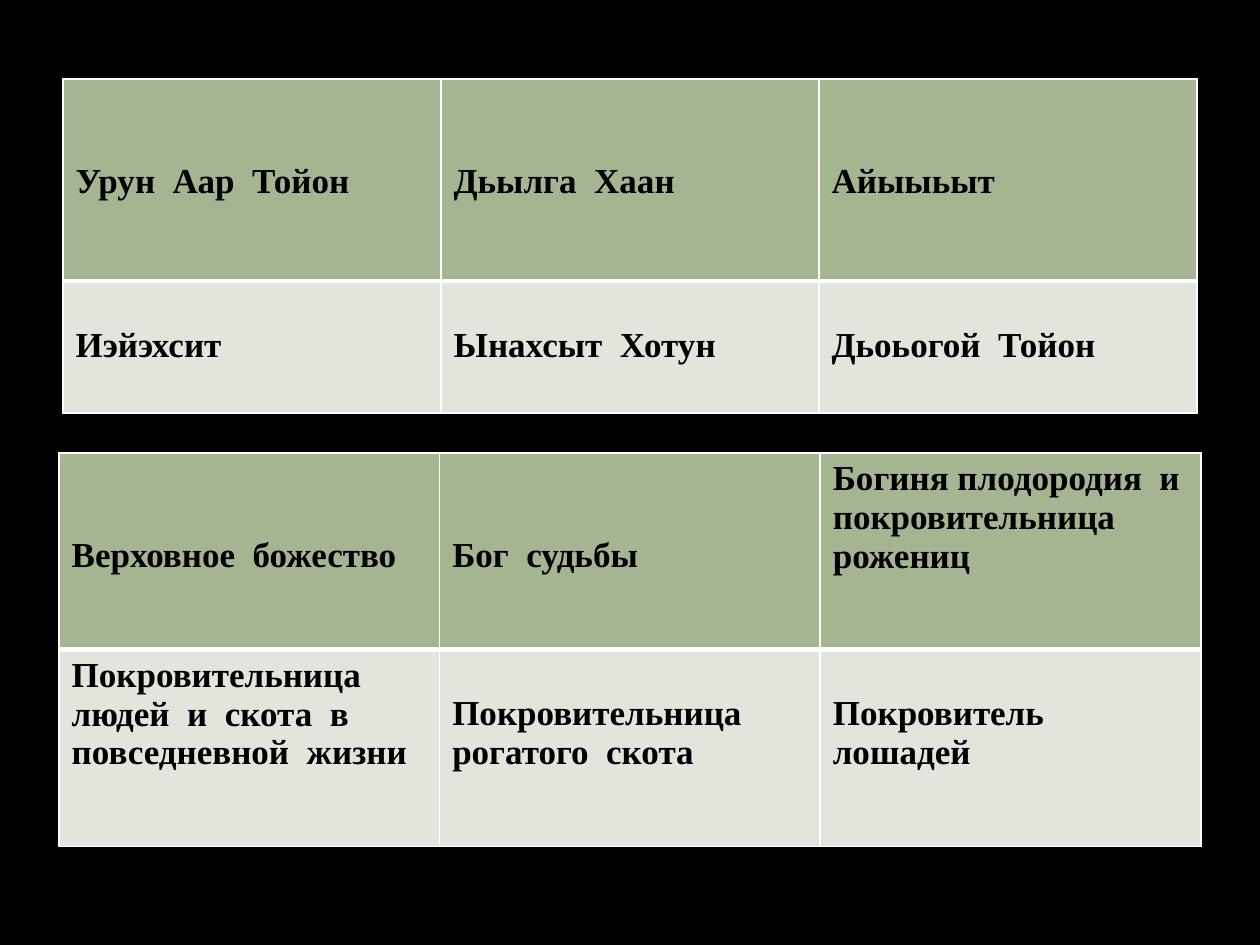
"""Build a slide with two tables: Yakut deities and the roles they play."""
from lxml.etree import SubElement
from pptx import Presentation
from pptx.dml.color import RGBColor as Color
from pptx.oxml.ns import qn
from pptx.util import Pt

BLACK = RGB_TEXT = Color(0x00, 0x00, 0x00)
WHITE = Color(0xFF, 0xFF, 0xFF)
SAGE = Color(0xA5, 0xB5, 0x92)
PALE_SAGE = Color(0xE1, 0xE5, 0xDC)

LINE_HEIGHT = 22.15
CELL_MARGIN = 3.6

DEITIES = [
    [("Урун  Аар  Тойон", 2), ("Дьылга  Хаан", 2), ("Айыыьыт", 2)],
    [("Иэйэхсит", 1), ("Ынахсыт  Хотун", 1), ("Дьоьогой  Тойон", 1)],
]
ROLES = [
    [("Верховное  божество", 2), ("Бог  судьбы", 2),
     ("Богиня плодородия  и покровительница\nрожениц", 0)],
    [("Покровительница  людей  и  скота  в повседневной  жизни", 0),
     ("Покровительница  рогатого  скота", 1),
     ("Покровитель  лошадей", 1)],
]


def write_text(frame, text, size=20, color=BLACK, bold=True, font="Times New Roman"):
    """Fill a text frame, one paragraph per line of text."""
    frame.text = text
    for paragraph in frame.paragraphs:
        for run in paragraph.runs:
            run.font.size = Pt(size)
            run.font.bold = bold
            run.font.name = font
            run.font.color.rgb = color


def draw_border(cell, side, width):
    """Give one side (L, R, T or B) of a cell a solid white line."""
    line = SubElement(cell._tc.get_or_add_tcPr(), qn(f"a:ln{side}"), w=str(Pt(width)))
    fill = SubElement(line, qn("a:solidFill"))
    SubElement(fill, qn("a:srgbClr"), val=str(WHITE))


def style_cell(cell, is_header, lines_above):
    """Set borders, fill and the drop of the text below the cell top."""
    top, bottom = (1, 3) if is_header else (3, 1)
    for side, width in zip("LRTB", (1, 1, top, bottom)):
        draw_border(cell, side, width)
    cell.fill.solid()
    cell.fill.fore_color.rgb = SAGE if is_header else PALE_SAGE
    cell.margin_top = Pt(CELL_MARGIN + lines_above * LINE_HEIGHT)


def add_grid(slide, entries, left, top, column_width, row_heights):
    """Add a table of (text, lines above) entries with equal columns."""
    columns = len(entries[0])
    table = slide.shapes.add_table(
        len(entries), columns, Pt(left), Pt(top),
        Pt(column_width * columns), Pt(sum(row_heights))).table
    for column in table.columns:
        column.width = Pt(column_width)
    for row_index, (row, height) in enumerate(zip(entries, row_heights)):
        table.rows[row_index].height = Pt(height)
        for column_index, (text, lines_above) in enumerate(row):
            cell = table.cell(row_index, column_index)
            style_cell(cell, row_index == 0, lines_above)
            write_text(cell.text_frame, text)


def main():
    """Build the slide and save it."""
    deck = Presentation()
    deck.slide_width, deck.slide_height = Pt(720), Pt(540)
    slide = deck.slides.add_slide(deck.slide_layouts[6])
    slide.background.fill.solid()
    slide.background.fill.fore_color.rgb = BLACK
    add_grid(slide, DEITIES, 36, 45, 216, (115.5, 75.6))
    add_grid(slide, ROLES, 33.75, 258.75, 217.5, (112.5, 112.5))
    deck.save("out.pptx")


if __name__ == "__main__":
    main()
